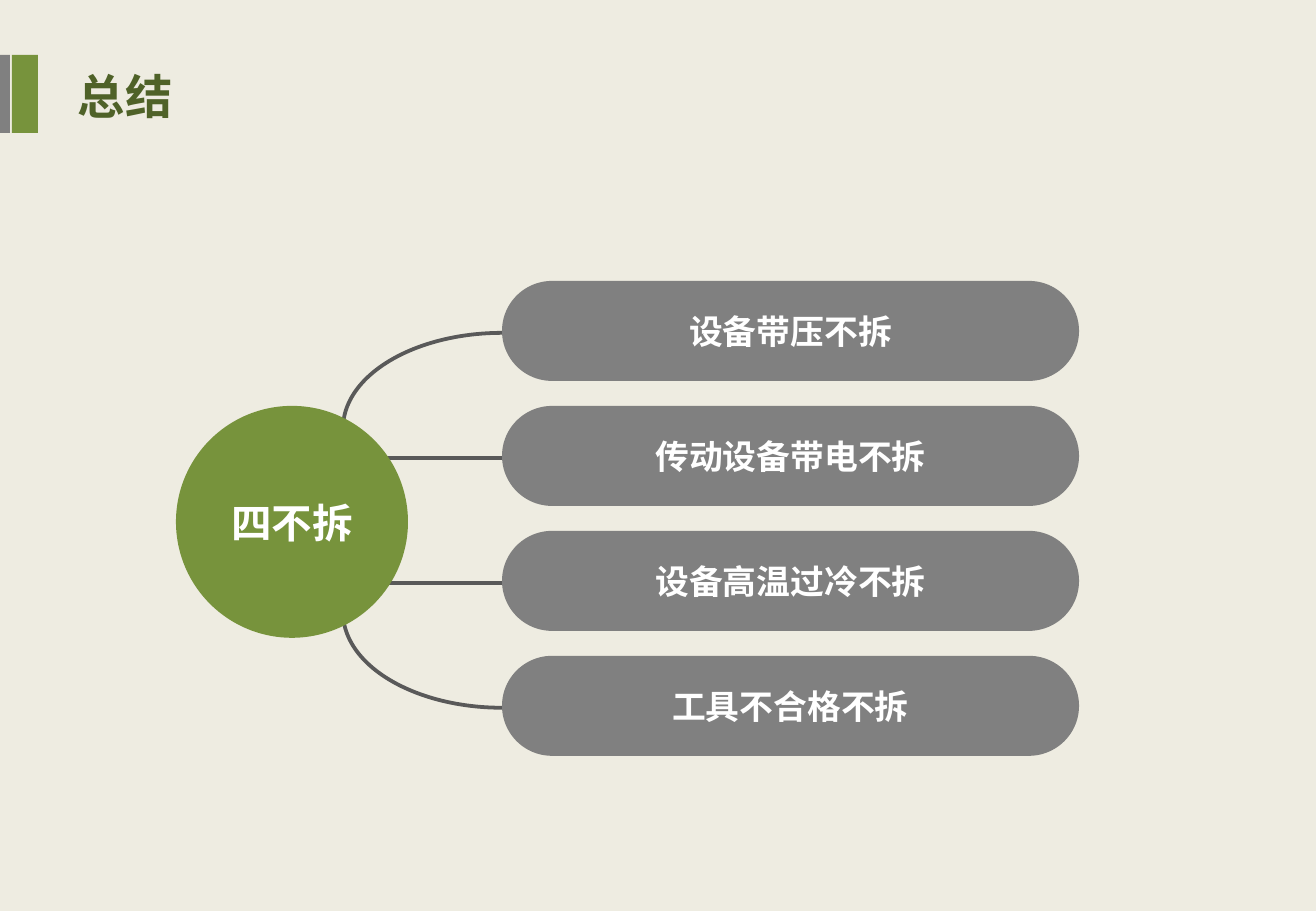
from lxml import etree
from pptx import Presentation
from pptx import util as u
from pptx.dml.color import RGBColor
from pptx.enum import shapes, text
from pptx.oxml import ns

SCALE = 914400 / 121.5
FONT = "Noto Sans CJK SC"
CREAM = RGBColor(0xEE, 0xEC, 0xE1)
GREEN = RGBColor(0x77, 0x93, 0x3C)
DARK = RGBColor(0x4F, 0x62, 0x28)
GREY = RGBColor(0x80, 0x80, 0x80)
SLATE = RGBColor(0x59, 0x59, 0x59)
WHITE = RGBColor(0xFF, 0xFF, 0xFF)
RULES = ["设备带压不拆", "传动设备带电不拆", "设备高温过冷不拆", "工具不合格不拆"]
TOP, STEP = 281, 125
LEFT, WIDE, HIGH = 502, 577, 100
BEND = 333


def px(*vals):
    return [u.Emu(round(v * SCALE)) for v in vals]


def write(frame, words, size, color, align):
    para = frame.paragraphs[0]
    para.text = words
    para.alignment = align
    font = para.font
    font.size = u.Pt(size)
    font.bold = True
    font.name = FONT
    font.color.rgb = color
    props = para._p.pPr.find(ns.qn("a:defRPr"))
    etree.SubElement(props, ns.qn("a:ea"), typeface=FONT)


def block(slide, kind, box, fill, words="", size=20):
    shape = slide.shapes.add_shape(kind, *px(*box))
    shape.shadow.inherit = False
    shape.fill.solid()
    shape.fill.fore_color.rgb = fill
    shape.line.fill.background()
    if words:
        shape.text_frame.vertical_anchor = text.MSO_ANCHOR.MIDDLE
        write(shape.text_frame, words, size, WHITE, text.PP_ALIGN.CENTER)
    return shape


def stroke(line):
    line.color.rgb = SLATE
    line.width = u.Pt(2.25)


def branch(slide, y):
    line = slide.shapes.add_connector(
        shapes.MSO_CONNECTOR.STRAIGHT, *px(379, y, LEFT, y))
    stroke(line.line)
    etree.SubElement(line._element.spPr, ns.qn("a:effectLst"))


def bracket(slide, box):
    shape = slide.shapes.add_shape(shapes.MSO_SHAPE.LEFT_BRACKET, *px(*box))
    shape.shadow.inherit = False
    shape.adjustments[0] = 0.6
    shape.fill.background()
    stroke(shape.line)


def title(slide, words):
    box = slide.shapes.add_textbox(*px(66, 61, 207, 69))
    box.text_frame.word_wrap = True
    write(box.text_frame, words, 28, DARK, text.PP_ALIGN.LEFT)


def main():
    deck = Presentation()
    deck.slide_width, deck.slide_height = u.Inches(10.83), u.Inches(7.5)
    slide = deck.slides.add_slide(deck.slide_layouts[6])
    slide.background.fill.solid()
    slide.background.fill.fore_color.rgb = CREAM

    kinds = shapes.MSO_SHAPE
    for row in (1, 2):
        branch(slide, BEND + row * STEP)
    bracket(slide, (343, BEND, LEFT - 343, 3 * STEP))
    block(slide, kinds.OVAL, (176, 406, 232, 232), GREEN, "四不拆", 24)
    for row, rule in enumerate(RULES):
        pill = block(slide, kinds.ROUNDED_RECTANGLE,
                     (LEFT, TOP + row * STEP, WIDE, HIGH), GREY, rule)
        pill.adjustments[0] = 0.5

    title(slide, "总结")
    block(slide, kinds.RECTANGLE, (12, 55, 26, 78), GREEN)
    block(slide, kinds.RECTANGLE, (0, 55, 10, 78), GREY)
    deck.save("out.pptx")


if __name__ == "__main__":
    main()
